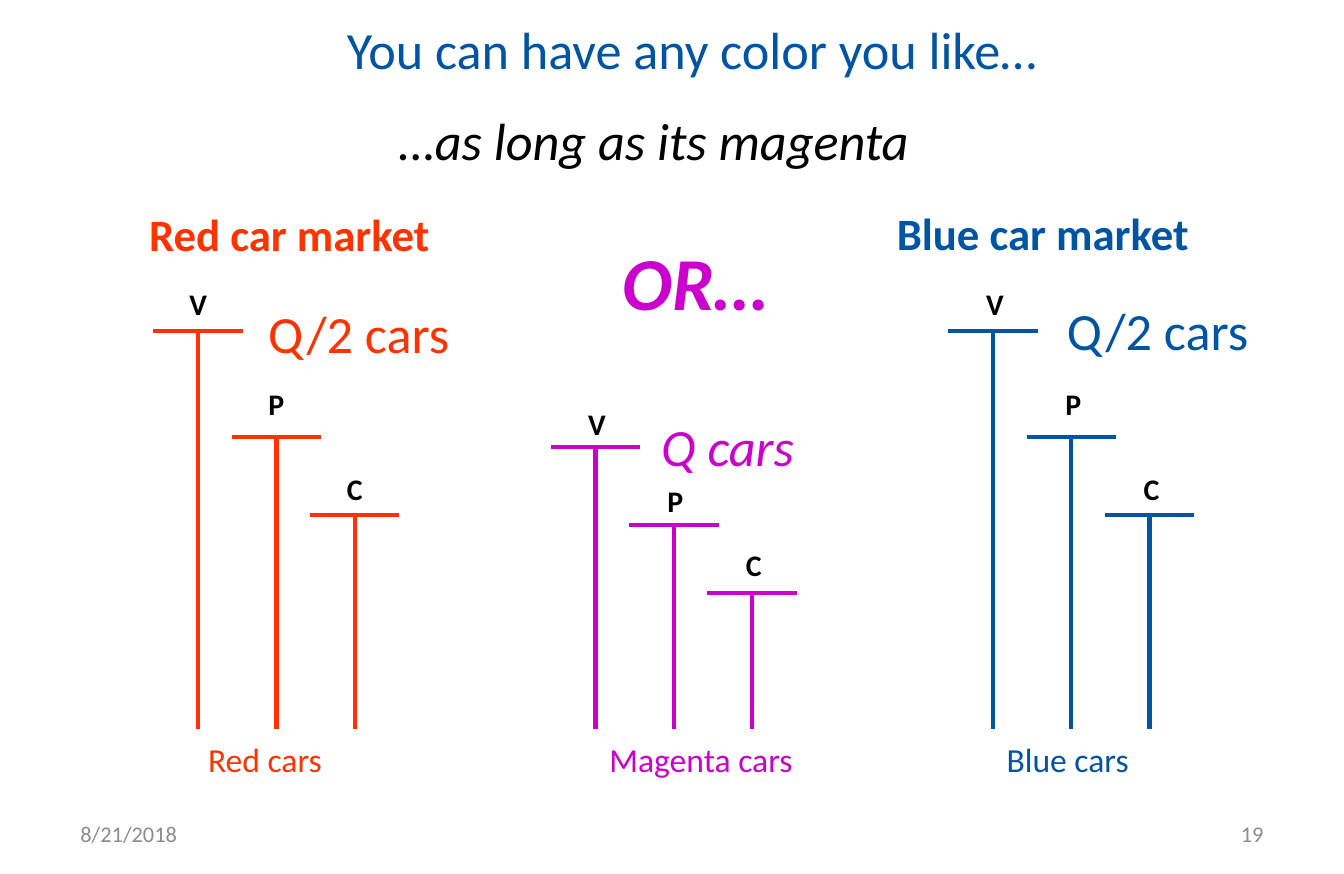
from dataclasses import dataclass

from lxml.etree import SubElement
from pptx import Presentation
from pptx.dml.color import RGBColor
from pptx.enum.shapes import MSO_CONNECTOR, MSO_SHAPE
from pptx.enum.text import MSO_ANCHOR, MSO_AUTO_SIZE, PP_ALIGN
from pptx.oxml.ns import qn
from pptx.util import Cm, Pt

COLORS = {"blue": "0055A2", "red": "FF3300", "magenta": "CC00CC",
          "black": "000000", "gray": "8C8C8C"}
FONT = "Calibri"
CROSSBAR = 1.69
STEM_PITCH = 1.48
LABEL_HEIGHT = 0.94
LABEL_WIDTHS = {"V": 0.94, "P": 0.84, "C": 0.89}
TALL_BARS = [("V", 7.52, 0.97), ("P", 5.52, 1.09), ("C", 4.04, 0.97)]
SHORT_BARS = [("V", 5.33, 0.91), ("P", 3.86, 0.91), ("C", 2.57, 0.99)]


@dataclass
class Note:
    text: str
    center: float
    top: float
    width: float
    height: float
    size: int
    bold: bool = False
    italic: bool = False


@dataclass
class Market:
    color: str
    box: tuple
    bars: list
    label_shift: float
    notes: list


MARKETS = [
    Market("blue", (17.92, 3.76, 4.65, 10.01), TALL_BARS, 0.04, [
        Note("Blue car market", 1.79, 0, 7.06, 1.3, 24, bold=True),
        Note("Blue cars", 2.26, 10.07, 3.33, 1.04, 18),
        Note("Q/2 cars", 3.96, 1.75, 4.65, 1.45, 28)]),
    Market("red", (2.9, 3.76, 4.65, 10.01), TALL_BARS, 0, [
        Note("Red car market", 2.57, 0.02, 6.91, 1.3, 24, bold=True),
        Note("Red cars", 2.11, 10.07, 3.2, 1.04, 18),
        Note("Q/2 cars", 3.88, 1.8, 4.65, 1.45, 28)]),
    Market("magenta", (10.41, 3.76, 4.65, 10.01), SHORT_BARS, 0.03, [
        Note("Magenta cars", 2.84, 10.07, 4.78, 1.04, 18),
        Note("Q cars", 3.34, 3.94, 3.63, 1.45, 28, italic=True),
        Note("OR…", 2.72, 0.57, 3.66, 1.98, 40, bold=True, italic=True)]),
]


def write(s, text, size, color, align, bold=False, italic=False,
          anchor=MSO_ANCHOR.TOP, wrap=True):
    tf = s.text_frame
    tf.text = text
    tf.word_wrap = wrap
    tf.auto_size = MSO_AUTO_SIZE.NONE if wrap else MSO_AUTO_SIZE.SHAPE_TO_FIT_TEXT
    tf.vertical_anchor = anchor
    p = tf.paragraphs[0]
    p.alignment = align
    r = p.runs[0]
    r.font.name = FONT
    r.font.size = Pt(size)
    r.font.bold = bold
    r.font.italic = italic
    r.font.color.rgb = RGBColor.from_string(COLORS[color])


def add_text(shapes, box, *args, **kwargs):
    write(shapes.add_textbox(*map(Cm, box)), *args, **kwargs)


def add_tag(shapes, center, top, width, height, text, size, color,
            bold=False, italic=False):
    s = shapes.add_shape(MSO_SHAPE.ROUNDED_RECTANGLE, Cm(center - width / 2),
                         Cm(top), Cm(width), Cm(height))
    s.adjustments[0] = 0.003
    s.shadow.inherit = False
    s.fill.background()
    s.line.fill.background()
    write(s, text, size, color, PP_ALIGN.CENTER, bold, italic, wrap=False)


def add_line(shapes, ends, color):
    s = shapes.add_connector(MSO_CONNECTOR.STRAIGHT, *map(Cm, ends))
    s.line.color.rgb = RGBColor.from_string(COLORS[color])
    s.line.width = Pt(2.25)
    SubElement(s._element.spPr, qn("a:effectLst"))


def add_market(slide, market):
    shapes = slide.shapes.add_group_shape().shapes
    left, top, _, height = market.box
    base = top + height
    for i, (letter, rise, lift) in enumerate(market.bars):
        x = left + CROSSBAR / 2 + i * STEM_PITCH
        y = base - rise
        add_line(shapes, (x - CROSSBAR / 2, y, x + CROSSBAR / 2, y), market.color)
        add_line(shapes, (x, y, x, base), market.color)
        add_tag(shapes, x + market.label_shift, y - lift, LABEL_WIDTHS[letter],
                LABEL_HEIGHT, letter, 16, "black", bold=True)
    for note in market.notes:
        add_tag(shapes, left + note.center, top + note.top, note.width,
                note.height, note.text, note.size, market.color,
                note.bold, note.italic)


def add_heading(slide, box):
    left, top, width, height = box
    title = slide.shapes.title
    title.left, title.top = Cm(left + 4.3), Cm(top)
    title.width, title.height = Cm(width - 4.3), Cm(1.68)
    write(title, "You can have any color you like…", 28, "blue",
          PP_ALIGN.LEFT, anchor=MSO_ANCHOR.MIDDLE)
    add_text(slide.shapes, (left + 5.29, top + height - 1.45, 12.01, 1.45),
             "…as long as its magenta", 28, "black", PP_ALIGN.LEFT, italic=True)


def add_footer(slide, box):
    left, top, width, height = box
    part = 5.92
    for x, text, align in ((left, "8/21/2018", PP_ALIGN.LEFT),
                           (left + width - part, "19", PP_ALIGN.RIGHT)):
        add_text(slide.shapes, (x, top, part, height), text, 12, "gray", align,
                 anchor=MSO_ANCHOR.MIDDLE)


def main():
    prs = Presentation()
    prs.slide_width, prs.slide_height = Cm(25.4), Cm(16.51)
    slide = prs.slides.add_slide(prs.slide_layouts[5])
    add_heading(slide, (2, 0.08, 23.4, 3.29))
    add_footer(slide, (1.27, 15.3, 22.86, 0.89))
    for market in MARKETS:
        add_market(slide, market)
    prs.save("out.pptx")


if __name__ == "__main__":
    main()
